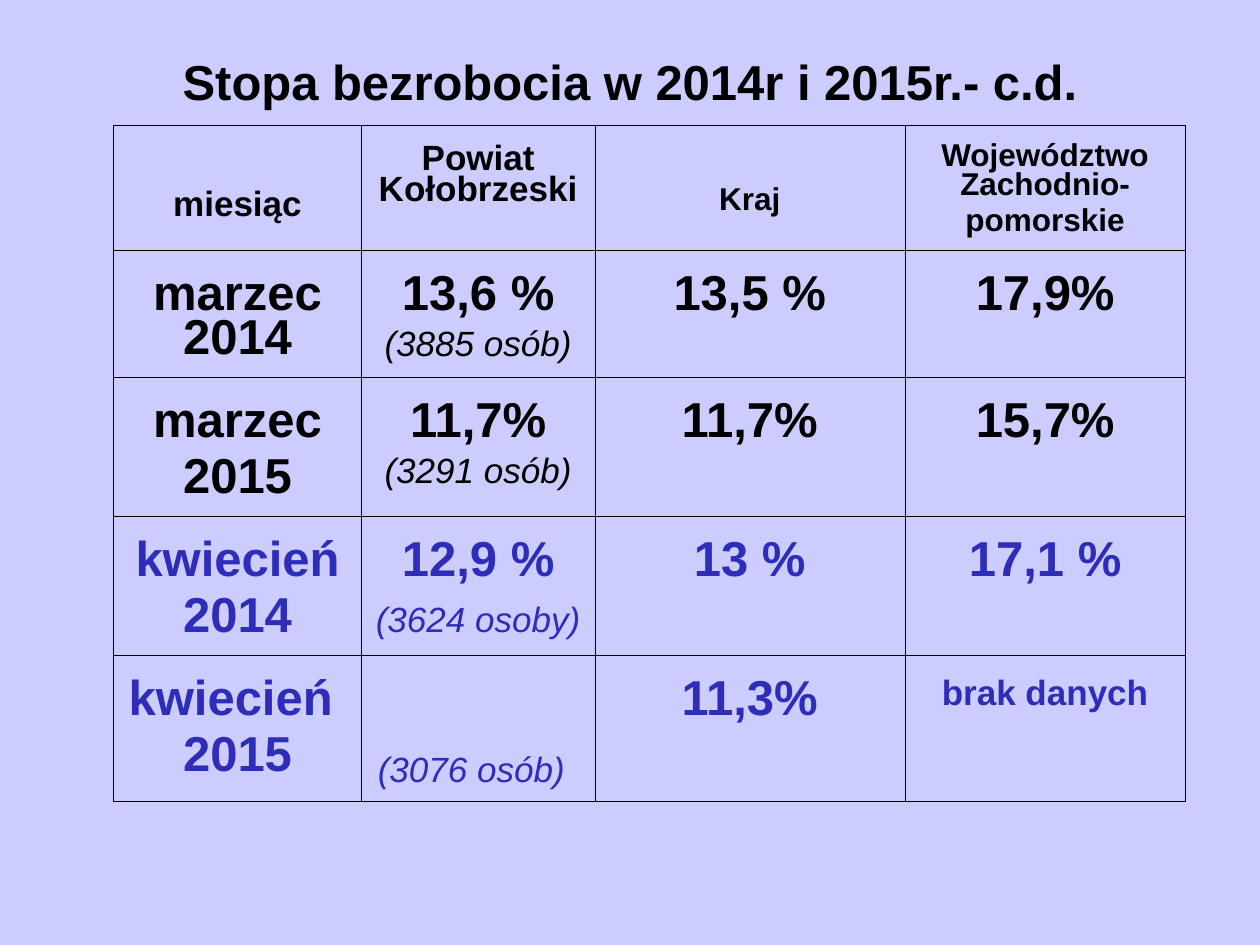
from dataclasses import dataclass

from lxml.etree import SubElement
from pptx import Presentation
from pptx.dml.color import RGBColor as Rgb
from pptx.enum.text import MSO_ANCHOR as Anchor, PP_ALIGN as Align
from pptx.oxml.ns import qn
from pptx.util import Inches, Pt


@dataclass(frozen=True)
class Theme:
    font: str = "Arial"
    back: str = "CCCCFF"
    ink: str = "000000"
    accent: str = "2D2DB9"
    large: int = 28
    medium: int = 20
    small: int = 18
    line_spacing: float = 0.81
    inner_line: float = 0.11
    outer_line: float = 0.23


class Page:
    def __init__(self, deck, theme):
        self.theme = theme
        self.slide = deck.slides.add_slide(deck.slide_layouts[6])
        fill = self.slide.background.fill
        fill.solid()
        fill.fore_color.rgb = Rgb.from_string(theme.back)

    def span(self, para, text, size, color, italic=False):
        run = para.add_run()
        run.text = text
        font = run.font
        font.name, font.size = self.theme.font, Pt(size)
        font.bold, font.italic = not italic, italic
        font.color.rgb = Rgb.from_string(color)

    def title(self, text, left, top, width, height):
        box = self.slide.shapes.add_textbox(
            Inches(left), Inches(top), Inches(width), Inches(height))
        frame = box.text_frame
        frame.word_wrap = True
        frame.vertical_anchor = Anchor.MIDDLE
        para = frame.paragraphs[0]
        para.alignment = Align.CENTER
        self.span(para, text, self.theme.large, self.theme.ink)

    def border(self, cell, side, width):
        line = SubElement(cell._tc.get_or_add_tcPr(), qn(f"a:ln{side}"),
                          w=str(Pt(width)))
        fill = SubElement(line, qn("a:solidFill"))
        SubElement(fill, qn("a:srgbClr"), val=self.theme.ink)

    def cell(self, cell, paras, color, space, top):
        cell.margin_left = cell.margin_right = Inches(0.1)
        cell.margin_top, cell.margin_bottom = Inches(top), Inches(0.05)
        frame = cell.text_frame
        for index, spans in enumerate(paras):
            para = frame.add_paragraph() if index else frame.paragraphs[0]
            para.alignment = Align.CENTER
            para.line_spacing = self.theme.line_spacing
            para.space_before = Pt(space)
            for text, size, italic in spans:
                self.span(para, text, size, color, italic)

    def table(self, rows, left, top, widths, heights):
        theme = self.theme
        last_row, last_col = len(heights) - 1, len(widths) - 1
        frame = self.slide.shapes.add_table(
            len(heights), len(widths), Inches(left), Inches(top),
            Inches(sum(widths)), Inches(sum(heights)))
        table = frame.table
        table.first_row = table.horz_banding = False
        for column, width in zip(table.columns, widths):
            column.width = Inches(width)
        for row, height in zip(table.rows, heights):
            row.height = Inches(height)
        for r, (color, space, cells) in enumerate(rows):
            for c, (margin, paras) in enumerate(cells):
                cell = table.cell(r, c)
                self.cell(cell, paras, color, space, margin)
                outer = {"L": c == 0, "R": c == last_col,
                         "T": r == 0, "B": r == last_row}
                for side, is_outer in outer.items():
                    self.border(cell, side, theme.outer_line if is_outer
                                else theme.inner_line)
                cell.fill.background()


def lines(size, *texts, top=0.2):
    """Cell content: its top margin and one bold paragraph per text."""
    return top, [[(text, size, False)] for text in texts]


def main():
    theme = Theme()
    large, medium, small = theme.large, theme.medium, theme.small

    deck = Presentation()
    deck.slide_width, deck.slide_height = Inches(10), Inches(7.5)
    page = Page(deck, theme)

    # Title
    page.title("Stopa bezrobocia w 2014r i 2015r.- c.d.", 0.5, 0.3, 9, 0.69)

    # Rates with the number of people below
    def people(text):
        return (text, medium, True)

    gap = (" ", large, False)

    def rate(text, *below):
        return 0.2, [[(text, large, False)], list(below)]

    # Table rows: colour, space before paragraphs, cells
    rows = [
        (theme.ink, 4.5, [
            lines(medium, "miesiąc", top=0.53),
            lines(medium, "Powiat Kołobrzeski", top=0.16),
            lines(small, "Kraj", top=0.5),
            lines(small, "Województwo Zachodnio-", "pomorskie", top=0.15)]),
        (theme.ink, 7, [
            lines(large, "marzec 2014"),
            rate("13,6 %", people("(3885 osób)")),
            lines(large, "13,5 %"),
            lines(large, "17,9%")]),
        (theme.ink, 7, [
            lines(large, "marzec", "2015"),
            rate("11,7%", people("(3291 osób)")),
            lines(large, "11,7%"),
            lines(large, "15,7%")]),
        (theme.accent, 7, [
            lines(large, "kwiecień", "2014"),
            rate("12,9 %", people("(3624 osoby)"), gap),
            lines(large, "13 %"),
            lines(large, "17,1 %")]),
        (theme.accent, 7, [
            lines(large, "kwiecień ", "2015"),
            (0.73, [[people("(3076 osób)"), gap]]),
            lines(large, "11,3%"),
            lines(medium, "brak danych")]),
    ]
    page.table(rows, 0.9, 0.99, widths=[1.97, 1.85, 2.46, 2.23],
               heights=[0.95, 0.95, 1.06, 1.05, 1.13])

    deck.save("out.pptx")


if __name__ == "__main__":
    main()
